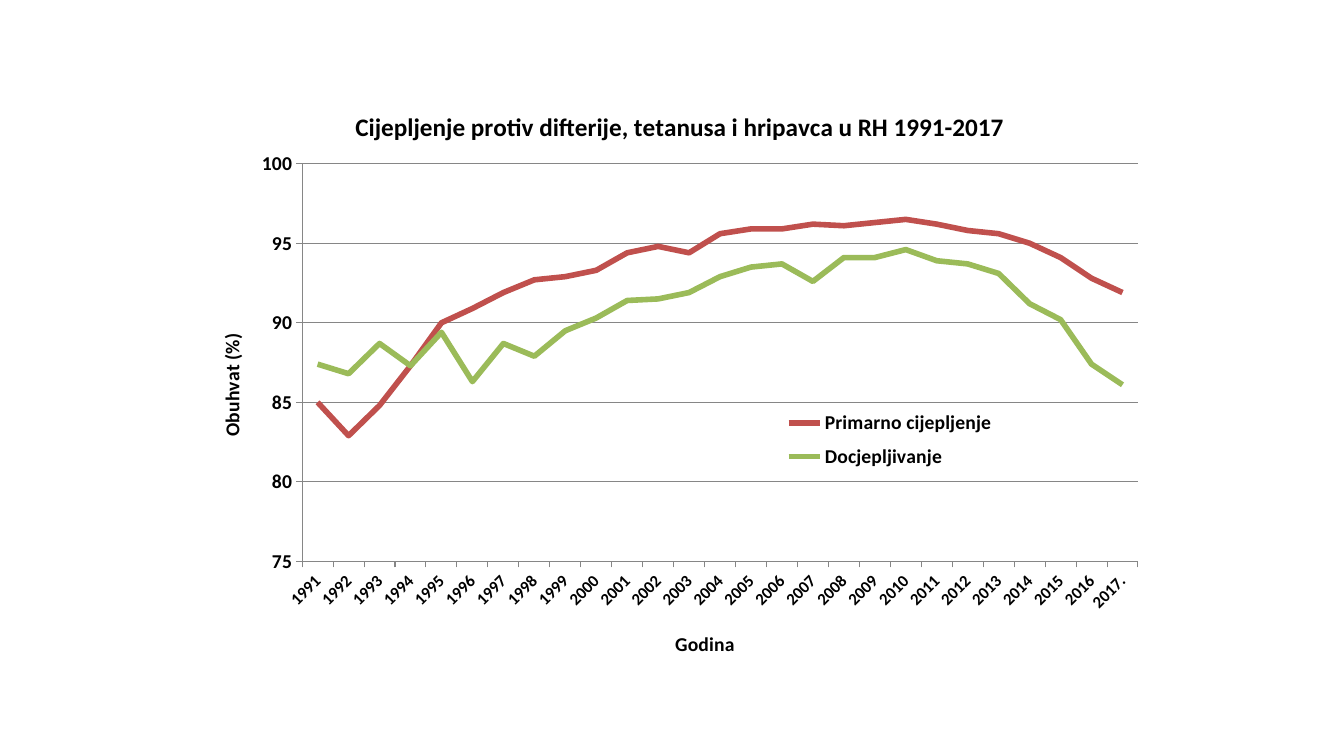
from dataclasses import dataclass

from lxml import etree
from pptx import Presentation
from pptx.chart.chart import Chart
from pptx.chart.data import CategoryChartData
from pptx.dml.color import RGBColor
from pptx.enum.chart import XL_CHART_TYPE, XL_LEGEND_POSITION, XL_TICK_MARK
from pptx.oxml.ns import qn
from pptx.text.text import Font, TextFrame
from pptx.util import Inches, Pt

LINE = XL_CHART_TYPE.LINE
LEGEND_RIGHT = XL_LEGEND_POSITION.RIGHT
TICK_OUTSIDE = XL_TICK_MARK.OUTSIDE
TICK_NONE = XL_TICK_MARK.NONE


@dataclass(frozen=True)
class Theme:
    """Colours, font and sizes of the slide."""
    font: str = "Calibri"
    ink: str = "000000"
    grid: str = "868686"
    title: float = 18
    label: float = 14
    year: float = 12
    curve: float = 4
    hairline: float = 0.75


@dataclass(frozen=True)
class Coverage:
    """One vaccination coverage curve, in percent per year."""
    name: str
    color: str
    values: tuple[float, ...]


THEME = Theme()
YEARS = [str(year) for year in range(1991, 2017)] + ["2017."]
COVERAGES = (
    Coverage("Primarno cijepljenje", "C0504D", (
        85, 82.9, 84.8, 87.3, 90, 90.9, 91.9, 92.7, 92.9,
        93.3, 94.4, 94.8, 94.4, 95.6, 95.9, 95.9, 96.2, 96.1,
        96.3, 96.5, 96.2, 95.8, 95.6, 95, 94.1, 92.8, 91.9)),
    Coverage("Docjepljivanje", "9BBB59", (
        87.4, 86.8, 88.7, 87.3, 89.4, 86.3, 88.7, 87.9, 89.5,
        90.3, 91.4, 91.5, 91.9, 92.9, 93.5, 93.7, 92.6, 94.1,
        94.1, 94.6, 93.9, 93.7, 93.1, 91.2, 90.2, 87.4, 86.1)),
)


def style_font(font: Font, size: float) -> None:
    """Apply the bold theme font at the given size."""
    font.name = THEME.font
    font.size = Pt(size)
    font.bold = True
    font.color.rgb = RGBColor.from_string(THEME.ink)


def write_title(frame: TextFrame, text: str, size: float) -> None:
    """Write a chart or axis title as one run."""
    run = frame.paragraphs[0].add_run()
    run.text = text
    style_font(run.font, size)


def style_line(line, color: str, width: float) -> None:
    """Set the colour and width of a line."""
    line.color.rgb = RGBColor.from_string(color)
    line.width = Pt(width)


def place(chart: Chart, part: str, index: int, **fractions: float) -> None:
    """Give a chart part a manual layout in fractions of the chart."""
    owner = chart.element.xpath(part)[0]
    for old in owner.findall(qn("c:layout")):
        owner.remove(old)
    layout = etree.Element(qn("c:layout"))
    manual = etree.SubElement(layout, qn("c:manualLayout"))
    if part.endswith("plotArea"):
        etree.SubElement(manual, qn("c:layoutTarget")).set("val", "inner")
    for key in ("x", "y"):
        etree.SubElement(manual, qn(f"c:{key}Mode")).set("val", "edge")
    for key, value in fractions.items():
        etree.SubElement(manual, qn(f"c:{key}")).set("val", str(value))
    owner.insert(index, layout)


def rotate(chart: Chart, part: str, degrees: int) -> None:
    """Rotate the text of a chart part."""
    body = chart.element.xpath(f"{part}//a:bodyPr")[0]
    body.set("rot", str(degrees * 60000))
    body.set("vert", "horz")


def style_axis(axis, title: str, size: float) -> None:
    """Style the title, labels, ticks and line of an axis."""
    write_title(axis.axis_title.text_frame, title, THEME.label)
    style_font(axis.tick_labels.font, size)
    axis.major_tick_mark = TICK_OUTSIDE
    axis.minor_tick_mark = TICK_NONE
    style_line(axis.format.line, THEME.grid, THEME.hairline)


def add_coverage_chart(slide) -> None:
    """Draw the vaccination coverage line chart."""
    data = CategoryChartData()
    data.categories = YEARS
    for coverage in COVERAGES:
        data.add_series(coverage.name, coverage.values)
    chart = slide.shapes.add_chart(
        LINE, Inches(1.84), Inches(0.8), Inches(9.64), Inches(5.89), data).chart
    style_font(chart.font, THEME.label)

    chart.has_title = True
    write_title(chart.chart_title.text_frame,
                "Cijepljenje protiv difterije, tetanusa i hripavca u RH 1991-2017",
                THEME.title)

    style_axis(chart.category_axis, "Godina", THEME.year)
    percent = chart.value_axis
    style_axis(percent, "Obuhvat (%)", THEME.label)
    percent.minimum_scale, percent.maximum_scale, percent.major_unit = 75, 100, 5
    percent.tick_labels.number_format = "0"
    percent.tick_labels.number_format_is_linked = False
    style_line(percent.major_gridlines.format.line, THEME.grid, THEME.hairline)

    chart.plots[0].vary_by_categories = False
    for curve, coverage in zip(chart.plots[0].series, COVERAGES):
        curve.smooth = False
        style_line(curve.format.line, coverage.color, THEME.curve)

    chart.has_legend = True
    chart.legend.position = LEGEND_RIGHT
    chart.legend.include_in_layout = True
    style_font(chart.legend.font, THEME.label)

    plot = "c:chart/c:plotArea"
    rotate(chart, f"{plot}/c:catAx/c:txPr", -45)
    rotate(chart, f"{plot}/c:valAx/c:title", -90)
    place(chart, plot, 0, x=0.12, y=0.14, w=0.86, h=0.67)
    place(chart, "c:chart/c:title", 1, x=0.17, y=0.04)
    place(chart, f"{plot}/c:catAx/c:title", 1, x=0.5, y=0.92)
    place(chart, f"{plot}/c:valAx/c:title", 1, x=0.03, y=0.42)
    place(chart, "c:chart/c:legend", 1, x=0.61, y=0.54, w=0.23, h=0.13)


def main() -> None:
    """Build and save the slide."""
    deck = Presentation()
    deck.slide_width, deck.slide_height = Inches(13.33), Inches(7.5)
    add_coverage_chart(deck.slides.add_slide(deck.slide_layouts[6]))
    deck.save("out.pptx")


if __name__ == "__main__":
    main()
